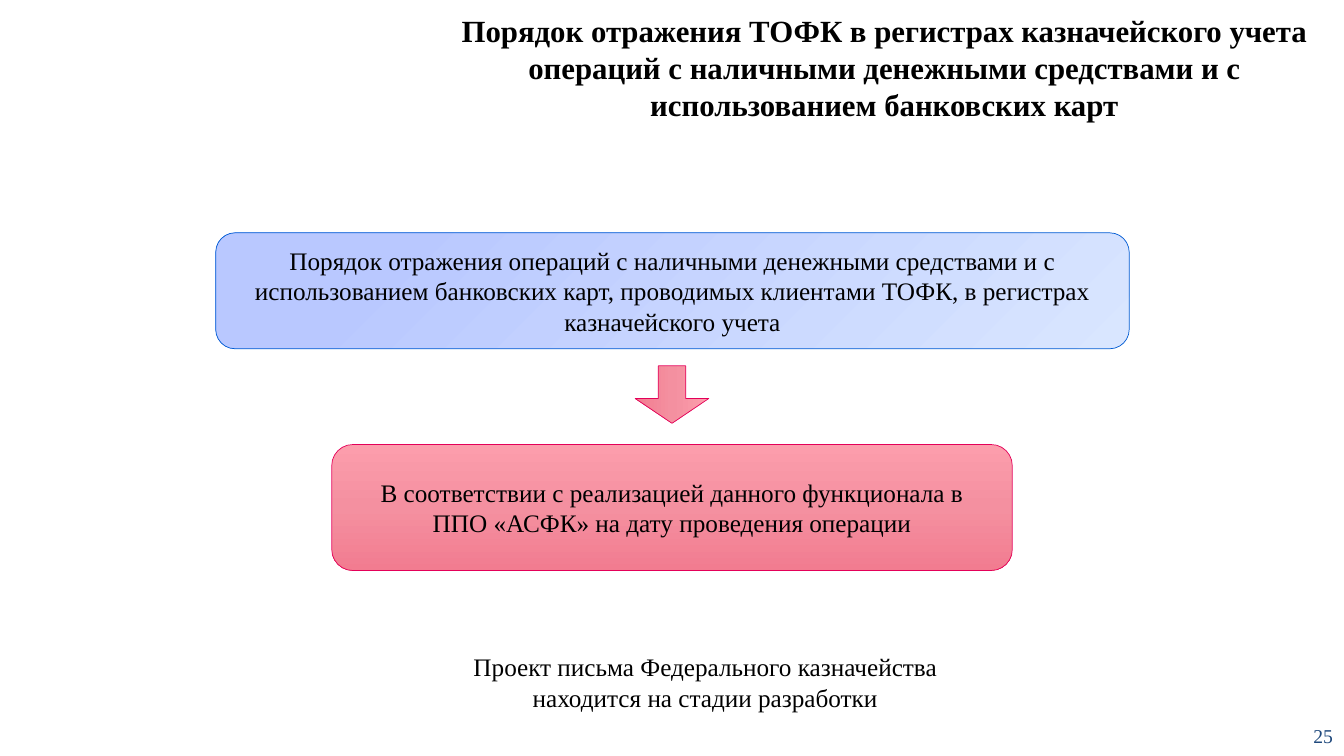
from lxml import etree
from pptx import Presentation
from pptx.dml.color import RGBColor
from pptx.enum.shapes import MSO_SHAPE
from pptx.enum.text import MSO_ANCHOR, PP_ALIGN
from pptx.oxml.ns import qn
from pptx.util import Inches, Pt

ROUNDED = MSO_SHAPE.ROUNDED_RECTANGLE
ARROW = MSO_SHAPE.RIGHT_ARROW
TOP, MIDDLE = MSO_ANCHOR.TOP, MSO_ANCHOR.MIDDLE
CENTER, RIGHT = PP_ALIGN.CENTER, PP_ALIGN.RIGHT

COLORS = {
    "text": "000000",
    "number": "1F497D",
    "blue_line": "005BD3",
    "blue_dark": "B9C8FF",
    "blue_light": "D9E6FF",
    "red_line": "E40059",
    "red_light": "FC9DAC",
    "red_middle": "F490A0",
    "red_dark": "F27C90",
}
BLUE_STOPS = [(18, "blue_dark"), (100, "blue_light")]
RED_STOPS = [(0, "red_light"), (50, "red_middle"), (100, "red_dark")]


def write_text(shape, text, size=18, color="text", bold=False, align=CENTER,
               anchor=MIDDLE, wrap=True, font="Times New Roman"):
    frame = shape.text_frame
    frame.word_wrap = wrap
    frame.vertical_anchor = anchor
    frame.text = text
    for paragraph in frame.paragraphs:
        paragraph.alignment = align
        paragraph.font.name = font
        paragraph.font.size = Pt(size)
        paragraph.font.bold = bold
        paragraph.font.color.rgb = RGBColor.from_string(COLORS[color])


class SlideBuilder:
    def __init__(self, slide):
        self.slide = slide
        self.line_width = Pt(0.5)

    def text(self, box, text, **style):
        shape = self.slide.shapes.add_textbox(*map(Inches, box))
        write_text(shape, text, **style)

    def shape(self, kind, box, stops, line, adjustments, radial=False, rotation=0):
        shape = self.slide.shapes.add_shape(kind, *map(Inches, box))
        shape.shadow.inherit = False
        shape.rotation = rotation
        for index, value in enumerate(adjustments):
            shape.adjustments[index] = value
        self.gradient(shape, stops, radial)
        shape.line.color.rgb = RGBColor.from_string(COLORS[line])
        shape.line.width = self.line_width
        return shape

    def gradient(self, shape, stops, radial):
        shape.fill.gradient()
        gradient = shape._element.spPr.find(qn("a:gradFill"))
        gradient.clear()
        gradient.set("rotWithShape", "1")
        stop_list = etree.SubElement(gradient, qn("a:gsLst"))
        for position, color in stops:
            stop = etree.SubElement(stop_list, qn("a:gs"), pos=str(position * 1000))
            etree.SubElement(stop, qn("a:srgbClr"), val=COLORS[color])
        if radial:
            circle = etree.SubElement(gradient, qn("a:path"), path="circle")
            etree.SubElement(circle, qn("a:fillToRect"), r="100000", b="100000")
        else:
            etree.SubElement(gradient, qn("a:lin"), ang="5400000", scaled="0")

    def panel(self, box, text, stops, line, radial=False):
        shape = self.shape(ROUNDED, box, stops, line, [0.167], radial)
        write_text(shape, text)

    def down_arrow(self, box, stops, line):
        self.shape(ARROW, box, stops, line, [0.372, 0.432], rotation=90)


def main():
    presentation = Presentation()
    presentation.slide_width = Inches(13.33)
    presentation.slide_height = Inches(7.5)
    builder = SlideBuilder(presentation.slides.add_slide(presentation.slide_layouts[6]))

    builder.text((12.86, 7.14, 0.46, 0.32), "25", size=14, color="number",
                 align=RIGHT, wrap=False)
    builder.text((4.23, 0.07, 9.08, 1.21),
                 "Порядок отражения ТОФК в регистрах казначейского учета операций "
                 "с наличными денежными средствами и с использованием банковских карт",
                 size=22, bold=True, anchor=TOP)
    builder.panel((2.14, 2.31, 9.06, 1.15),
                  "Порядок отражения операций с наличными денежными средствами и с "
                  "использованием банковских карт, проводимых клиентами ТОФК, "
                  "в регистрах казначейского учета",
                  BLUE_STOPS, "blue_line", radial=True)
    builder.panel((3.29, 4.41, 6.75, 1.25),
                  "В соответствии с реализацией данного функционала в\n"
                  "ППО «АСФК» на дату проведения операции",
                  RED_STOPS, "red_line")
    builder.down_arrow((6.38, 3.55, 0.57, 0.73), RED_STOPS, "red_line")
    builder.text((4.39, 6.41, 5.21, 0.71),
                 "Проект письма Федерального казначейства находится на стадии разработки")

    presentation.save("out.pptx")


if __name__ == "__main__":
    main()
